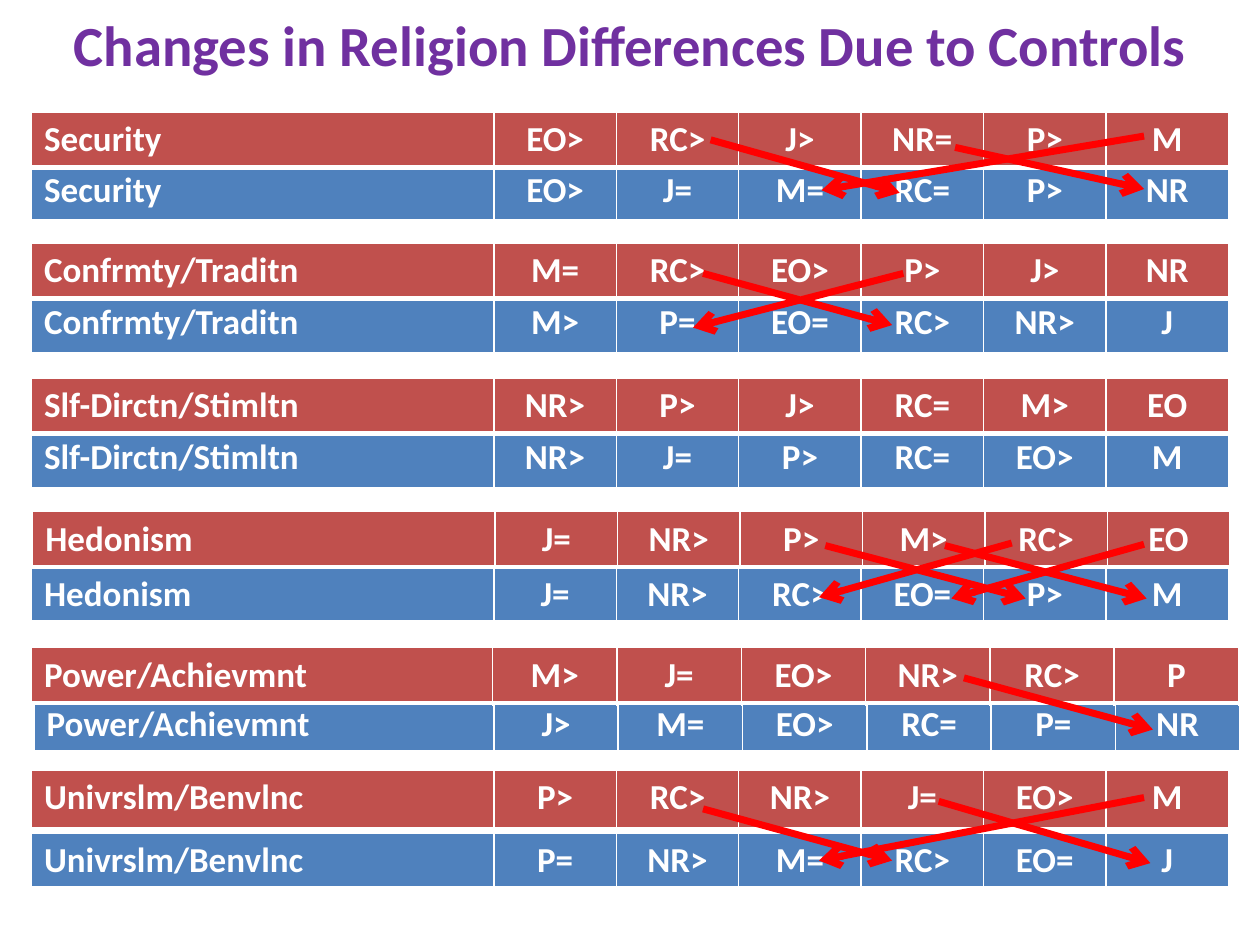
from lxml import etree
from pptx import Presentation
from pptx.dml.color import RGBColor as RGB
from pptx.enum.shapes import MSO_CONNECTOR as Link
from pptx.enum.text import MSO_ANCHOR as Anchor, PP_ALIGN as Align
from pptx.oxml.ns import qn
from pptx.util import Inches, Pt

HUES = {"title": "7030A0", "before": "C0504D", "after": "4F81BD",
        "text": "FFFFFF", "rule": "FFFFFF", "arrow": "FF0000"}

# Each bar: label, left, top, width, height, width of the label column, ranking
AFTER = [
    ("Security", 0.25, 1.29, 9.5, 0.47, 3.67, "EO> J= M= RC= P> NR"),
    ("Confrmty/Traditn", 0.25, 2.34, 9.5, 0.47, 3.67, "M> P= EO= RC> NR> J"),
    ("Slf-Dirctn/Stimltn", 0.25, 3.41, 9.5, 0.47, 3.67, "NR> J= P> RC= EO> M"),
    ("Hedonism", 0.25, 4.5, 9.5, 0.43, 3.67, "J= NR> RC> EO= P> M"),
    ("Power/Achievmnt", 0.27, 5.53, 9.57, 0.43, 3.65, "J> M= EO> RC= P= NR"),
    ("Univrslm/Benvlnc", 0.25, 6.61, 9.5, 0.43, 3.67, "P= NR> M= RC> EO= J"),
]
BEFORE = [
    ("Security", 0.25, 0.89, 9.5, 0.43, 3.67, "EO> RC> J> NR= P> M"),
    ("Confrmty/Traditn", 0.25, 1.93, 9.5, 0.43, 3.67, "M= RC> EO> P> J> NR"),
    ("Slf-Dirctn/Stimltn", 0.25, 3, 9.5, 0.43, 3.67, "NR> P> J> RC= M> EO"),
    ("Hedonism", 0.26, 4.06, 9.5, 0.43, 3.67, "J= NR> P> M> RC> EO"),
    ("Power/Achievmnt", 0.25, 5.14, 9.58, 0.43, 3.66, "M> J= EO> NR> RC> P"),
    ("Univrslm/Benvlnc", 0.25, 6.11, 9.5, 0.47, 3.67, "P> RC> NR> J= EO> M"),
]
# Each move: start x, y, end x, y
MOVES = [
    (5.64, 1.11, 7.14, 1.53), (7.58, 1.17, 9.08, 1.5), (9.08, 1.08, 6.52, 1.51),
    (5.58, 2.17, 7.08, 2.58), (7.17, 2.17, 5.5, 2.6),
    (6.55, 4.33, 8.14, 4.75), (7.5, 4.33, 9.1, 4.75),
    (8.03, 4.31, 6.5, 4.74), (9.08, 4.32, 7.55, 4.75),
    (7.65, 5.38, 9.15, 5.79),
    (5.58, 6.42, 7.08, 6.83), (7.45, 6.36, 9.13, 6.85), (9.08, 6.33, 6.5, 6.83),
]


class Deck:
    """Holds the style and the current slide."""
    font = "Calibri"

    def __init__(self):
        self.prs = Presentation()
        self.prs.slide_width, self.prs.slide_height = Inches(10), Inches(7.5)
        self.slide = self.prs.slides.add_slide(self.prs.slide_layouts[5])

    def label(self, frame, text, size, hue, align):
        frame.text = text
        para = frame.paragraphs[0]
        para.alignment = align
        font = para.runs[0].font
        font.name, font.size, font.bold = self.font, Pt(size), True
        font.color.rgb = RGB.from_string(HUES[hue])

    def title(self, text):
        box = self.slide.shapes.title
        box.left, box.top = Inches(0), Inches(-0.15)
        box.width, box.height = Inches(10), Inches(1)
        box.text_frame.vertical_anchor = Anchor.MIDDLE
        self.label(box.text_frame, text, 32.4, "title", Align.CENTER)

    def edge(self, cell):
        """Rule all four sides of a cell, with a thicker bottom."""
        props = cell._tc.get_or_add_tcPr()
        for spot, (side, width) in enumerate(
                [("lnL", 1), ("lnR", 1), ("lnT", 1), ("lnB", 3)]):
            line = etree.Element(qn("a:" + side), w=str(Pt(width)))
            fill = etree.SubElement(line, qn("a:solidFill"))
            etree.SubElement(fill, qn("a:srgbClr"), val=HUES["rule"])
            props.insert(spot, line)

    def bar(self, hue, name, left, top, width, height, lead, ranks):
        """Add a one-row table: a name and the groups in rank order."""
        texts = [name] + ranks.split()
        table = self.slide.shapes.add_table(
            1, len(texts), Inches(left), Inches(top),
            Inches(width), Inches(height)).table
        table.first_row = table.horz_banding = False
        rest = (width - lead) / (len(texts) - 1)
        for col, text in enumerate(texts):
            table.columns[col].width = Inches(rest if col else lead)
            cell = table.cell(0, col)
            cell.fill.solid()
            cell.fill.fore_color.rgb = RGB.from_string(HUES[hue])
            self.edge(cell)
            self.label(cell.text_frame, text, 20, "text",
                       Align.CENTER if col else Align.LEFT)

    def arrow(self, *ends):
        link = self.slide.shapes.add_connector(
            Link.STRAIGHT, *[Inches(n) for n in ends])
        link.line.width = Pt(4)
        link.line.color.rgb = RGB.from_string(HUES["arrow"])
        props = link._element.spPr
        etree.SubElement(props.find(qn("a:ln")), qn("a:tailEnd"), type="arrow")
        etree.SubElement(props, qn("a:effectLst"))


def main():
    deck = Deck()
    deck.title("Changes in Religion Differences Due to Controls")
    for hue, bars in (("after", AFTER), ("before", BEFORE)):
        for bar in bars:
            deck.bar(hue, *bar)
    for move in MOVES:
        deck.arrow(*move)
    deck.prs.save("out.pptx")


if __name__ == "__main__":
    main()
